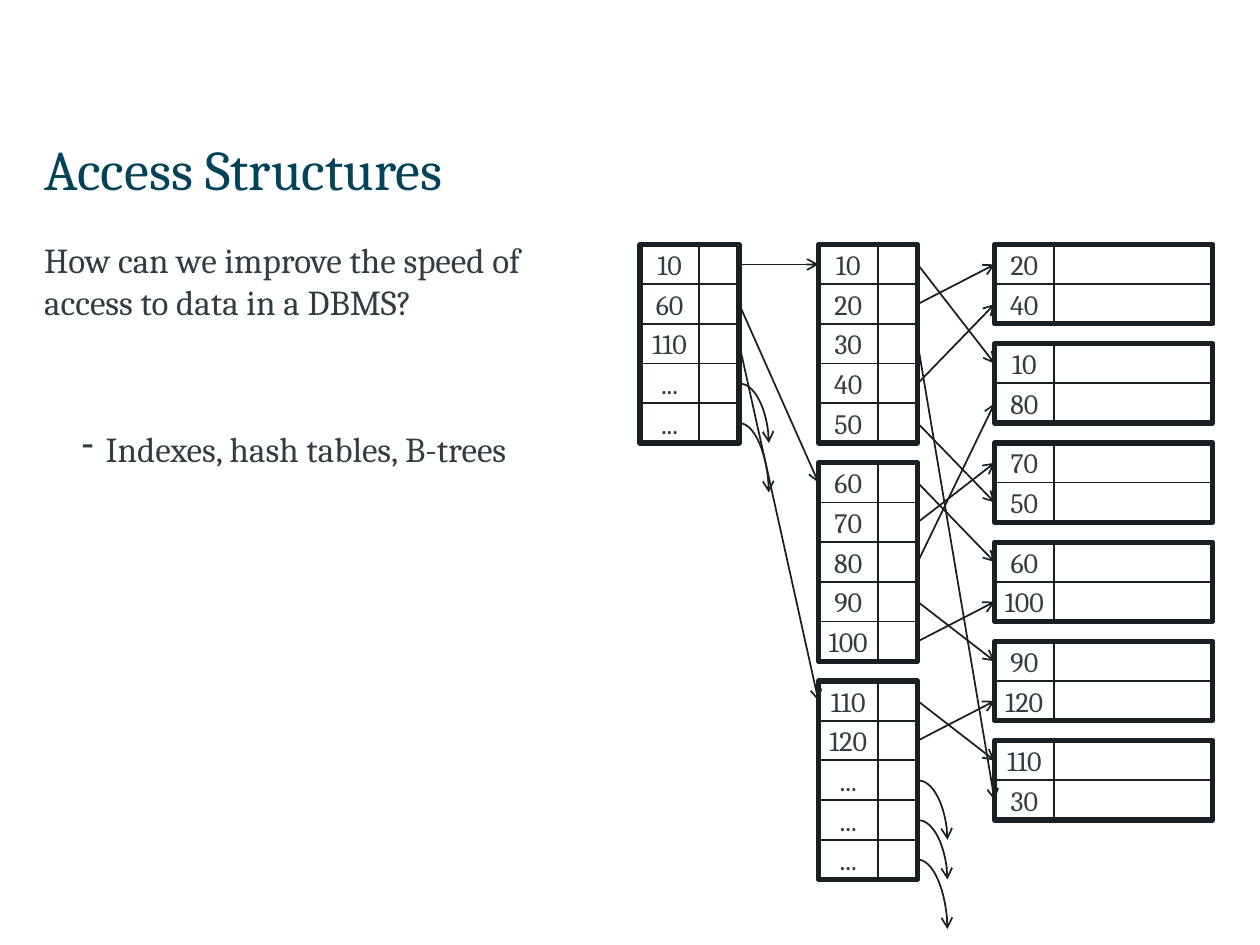
"""Builds a slide showing a two-level index that points into data blocks."""
from dataclasses import dataclass

from lxml.etree import SubElement
from pptx import Presentation
from pptx.dml.color import RGBColor
from pptx.enum.shapes import MSO_CONNECTOR as Connector, MSO_SHAPE as Preset
from pptx.enum.text import MSO_ANCHOR as Anchor, MSO_AUTO_SIZE as AutoSize, PP_ALIGN as Align
from pptx.oxml.ns import qn
from pptx.util import Cm, Pt

COLORS = {"title": "014359", "text": "323D43", "line": "191F22", "cell": "FFFFFF"}
FONT = "Cambria"
TOP = 4.93
ROW_HEIGHT = 0.8
KEY_WIDTH = 1.2
BLOCK_GAP = 0.4
ELLIPSIS = "..."


@dataclass(frozen=True)
class Level:
    left: float
    value_width: float
    blocks: tuple[tuple[str, ...], ...]

    @property
    def right(self) -> float:
        return self.left + KEY_WIDTH + self.value_width

    def block_top(self, index: int) -> float:
        rows_above = sum(len(block) for block in self.blocks[:index])
        return TOP + rows_above * ROW_HEIGHT + index * BLOCK_GAP

    def row_middles(self) -> list[tuple[str, float, bool]]:
        return [
            (key, self.block_top(index) + (row + 0.5) * ROW_HEIGHT, row == len(block) - 1)
            for index, block in enumerate(self.blocks)
            for row, key in enumerate(block)
        ]


OUTER_INDEX = Level(12.9, 0.8, (("10", "60", "110", ELLIPSIS, ELLIPSIS),))
INNER_INDEX = Level(16.5, 0.8, (
    ("10", "20", "30", "40", "50"),
    ("60", "70", "80", "90", "100"),
    ("110", "120", ELLIPSIS, ELLIPSIS, ELLIPSIS),
))
DATA = Level(20.05, 3.2, (
    ("20", "40"), ("10", "80"), ("70", "50"), ("60", "100"), ("90", "120"), ("110", "30"),
))


def color(name: str) -> RGBColor:
    return RGBColor.from_string(COLORS[name])


def format_font(paragraph, size: float, name: str) -> None:
    paragraph.font.name = FONT
    paragraph.font.size = Pt(size)
    paragraph.font.color.rgb = color(name)


def set_margins(frame, left: float, top: float, right: float, bottom: float) -> None:
    frame.margin_left, frame.margin_top = Cm(left), Cm(top)
    frame.margin_right, frame.margin_bottom = Cm(right), Cm(bottom)


def add_box(slide, left: float, top: float, width: float, height: float,
            line_width: float, filled: bool):
    shape = slide.shapes.add_shape(Preset.RECTANGLE, Cm(left), Cm(top), Cm(width), Cm(height))
    shape.shadow.inherit = False
    if filled:
        shape.fill.solid()
        shape.fill.fore_color.rgb = color("cell")
    else:
        shape.fill.background()
    shape.line.color.rgb = color("line")
    shape.line.width = Pt(line_width)
    return shape


def add_level(slide, level: Level) -> None:
    for index, block in enumerate(level.blocks):
        block_top = level.block_top(index)
        for row, key in enumerate(block):
            top = block_top + row * ROW_HEIGHT
            frame = add_box(slide, level.left, top, KEY_WIDTH, ROW_HEIGHT, 1, True).text_frame
            frame.word_wrap = False
            frame.vertical_anchor = Anchor.MIDDLE
            set_margins(frame, 0, 0, 0, 0)
            paragraph = frame.paragraphs[0]
            paragraph.text = key
            paragraph.alignment = Align.CENTER
            format_font(paragraph, 16, "text")
            add_box(slide, level.left + KEY_WIDTH, top, level.value_width, ROW_HEIGHT, 1, True)
        add_box(slide, level.left, block_top, level.right - level.left,
                len(block) * ROW_HEIGHT, 3, False)


def add_arrow(slide, start: tuple[float, float], end: tuple[float, float], curved: bool) -> None:
    kind = Connector.CURVE if curved else Connector.STRAIGHT
    connector = slide.shapes.add_connector(kind, *(Cm(value) for value in start + end))
    connector.line.color.rgb = color("line")
    connector.line.width = Pt(1)
    properties = connector._element.spPr
    if curved:
        properties.find(qn("a:prstGeom")).set("prst", "curvedConnector2")
    SubElement(properties.find(qn("a:ln")), qn("a:tailEnd"), type="arrow")
    SubElement(properties, qn("a:effectLst"))


def add_links(slide, source: Level, target: Level) -> None:
    target_middles = {key: middle for key, middle, _ in target.row_middles()}
    for key, middle, is_last in source.row_middles():
        if key == ELLIPSIS:
            end = (source.right + 0.6, middle + (1.4 if is_last else 1.2))
        else:
            end = (target.left, target_middles[key])
        add_arrow(slide, (source.right, middle), end, key == ELLIPSIS)


def format_title(title) -> None:
    title.left, title.top, title.width, title.height = Cm(0.89), Cm(2.49), Cm(23.6), Cm(1.8)
    frame = title.text_frame
    frame.auto_size = AutoSize.NONE
    frame.vertical_anchor = Anchor.MIDDLE
    set_margins(frame, 0, 0.13, 0.25, 0.13)
    paragraph = frame.paragraphs[0]
    paragraph.text = "Access Structures"
    paragraph.alignment = Align.LEFT
    format_font(paragraph, 32, "title")


def add_body(slide) -> None:
    frame = slide.shapes.add_textbox(Cm(0.89), Cm(4.67), Cm(11.38), Cm(12.47)).text_frame
    frame.word_wrap = True
    set_margins(frame, 0, 0.13, 0.25, 0.13)
    question = frame.paragraphs[0]
    question.text = "How can we improve the speed of access to data in a DBMS?"
    question.space_after = Pt(18)
    answer = frame.add_paragraph()
    answer.text = "Indexes, hash tables, B-trees"
    answer.level = 1
    answer.space_before = Pt(42)
    properties = answer._p.get_or_add_pPr()
    properties.set("marL", str(Cm(1.24)))
    properties.set("indent", str(Cm(-0.48)))
    SubElement(properties, qn("a:buChar"), char="-")
    for paragraph in (question, answer):
        format_font(paragraph, 20, "text")


def main() -> None:
    presentation = Presentation()
    presentation.slide_width, presentation.slide_height = Cm(25.4), Cm(19.05)
    slide = presentation.slides.add_slide(presentation.slide_layouts[5])
    format_title(slide.shapes.title)
    add_body(slide)
    for level in (DATA, INNER_INDEX, OUTER_INDEX):
        add_level(slide, level)
    add_links(slide, INNER_INDEX, DATA)
    add_links(slide, OUTER_INDEX, INNER_INDEX)
    presentation.save("out.pptx")


if __name__ == "__main__":
    main()
